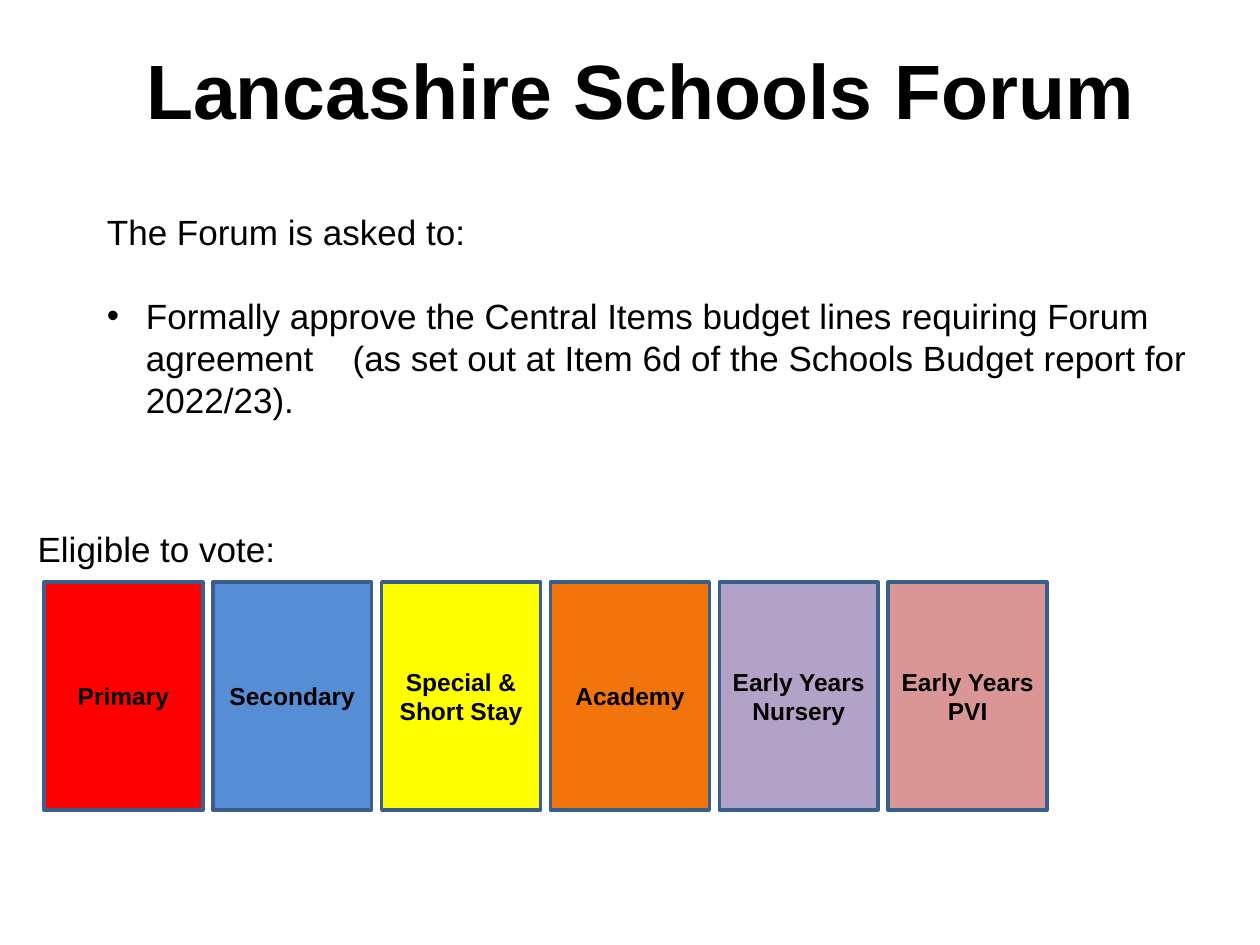
from pptx import Presentation
from pptx.dml.color import RGBColor
from pptx.enum.shapes import MSO_SHAPE as Shape
from pptx.enum.text import MSO_ANCHOR as Anchor, PP_ALIGN as Align
from pptx.oxml.ns import qn
from pptx.util import Inches, Pt
from lxml.etree import SubElement

BLACK = RGBColor(0x00, 0x00, 0x00)
BORDER = RGBColor(0x3A, 0x5F, 0x8C)
RED = RGBColor(0xFF, 0x00, 0x00)
BLUE = RGBColor(0x55, 0x8E, 0xD5)
YELLOW = RGBColor(0xFF, 0xFF, 0x00)
ORANGE = RGBColor(0xF1, 0x74, 0x0D)
PURPLE = RGBColor(0xB3, 0xA2, 0xC7)
PINK = RGBColor(0xD9, 0x96, 0x94)

VOTERS = [
    (["Primary"], RED),
    (["Secondary"], BLUE),
    (["Special & Short Stay"], YELLOW),
    (["Academy"], ORANGE),
    (["Early Years", "Nursery"], PURPLE),
    (["Early Years", "PVI"], PINK),
]


def style(para, size, bold=False, align=Align.LEFT):
    para.alignment = align
    font = para.font
    font.name = "Arial"
    font.size = Pt(size)
    font.bold = bold
    font.color.rgb = BLACK


def add_text(page, left, top, width, height):
    box = page.shapes.add_textbox(left, top, width, height)
    box.text_frame.word_wrap = True
    return box.text_frame


def add_bullet(para, indent, tab):
    props = para._p.get_or_add_pPr()
    props.set("marL", str(indent))
    props.set("indent", str(-indent))
    SubElement(props, qn("a:buFont"), typeface="Arial")
    SubElement(props, qn("a:buChar"), char="•")
    tabs = SubElement(props, qn("a:tabLst"))
    SubElement(tabs, qn("a:tab"), pos=str(tab), algn="l")


def place_title(page, left, top, width, height):
    title = page.shapes.title
    title.left, title.top, title.width, title.height = left, top, width, height
    frame = title.text_frame
    frame.text = "Lancashire Schools Forum"
    frame.vertical_anchor = Anchor.TOP
    style(frame.paragraphs[0], 44, bold=True)


def place_request(page, left, top, width, height):
    frame = add_text(page, left, top, width, height)
    intro = frame.paragraphs[0]
    intro.text = "The Forum is asked to:"
    style(intro, 20)
    item = frame.add_paragraph()
    item.text = ("Formally approve the Central Items budget lines requiring Forum "
                 "agreement\t(as set out at Item 6d of the Schools Budget report for 2022/23).")
    add_bullet(item, Inches(0.31), Inches(1.95))
    item.space_before = Pt(24)
    style(item, 20)


def place_voters(page, left, top, width, height):
    label = add_text(page, left, top, Inches(2.28), Inches(0.44)).paragraphs[0]
    label.text = "Eligible to vote:"
    style(label, 20)

    inset, offset, gap = Inches(0.15), Inches(0.48), Inches(0.08)
    card_width = (width - inset - gap * (len(VOTERS) - 1)) // len(VOTERS)
    for index, (lines, fill) in enumerate(VOTERS):
        card = page.shapes.add_shape(
            Shape.RECTANGLE, left + inset + index * (card_width + gap),
            top + offset, card_width, height - offset)
        card.shadow.inherit = False
        card.fill.solid()
        card.fill.fore_color.rgb = fill
        card.line.color.rgb = BORDER
        card.line.width = Pt(2)
        frame = card.text_frame
        frame.word_wrap = True
        frame.vertical_anchor = Anchor.MIDDLE
        frame.text = "\n".join(lines)
        for para in frame.paragraphs:
            style(para, 14, bold=True, align=Align.CENTER)


def main():
    deck = Presentation()
    deck.slide_width, deck.slide_height = Inches(10), Inches(7.5)
    page = deck.slides.add_slide(deck.slide_layouts[5])
    place_title(page, Inches(1.06), Inches(0.29), Inches(8.19), Inches(0.84))
    place_voters(page, Inches(0.2), Inches(4.14), Inches(8.11), Inches(2.29))
    place_request(page, Inches(0.75), Inches(1.62), Inches(8.82), Inches(1.8))
    deck.save("out.pptx")


if __name__ == "__main__":
    main()
